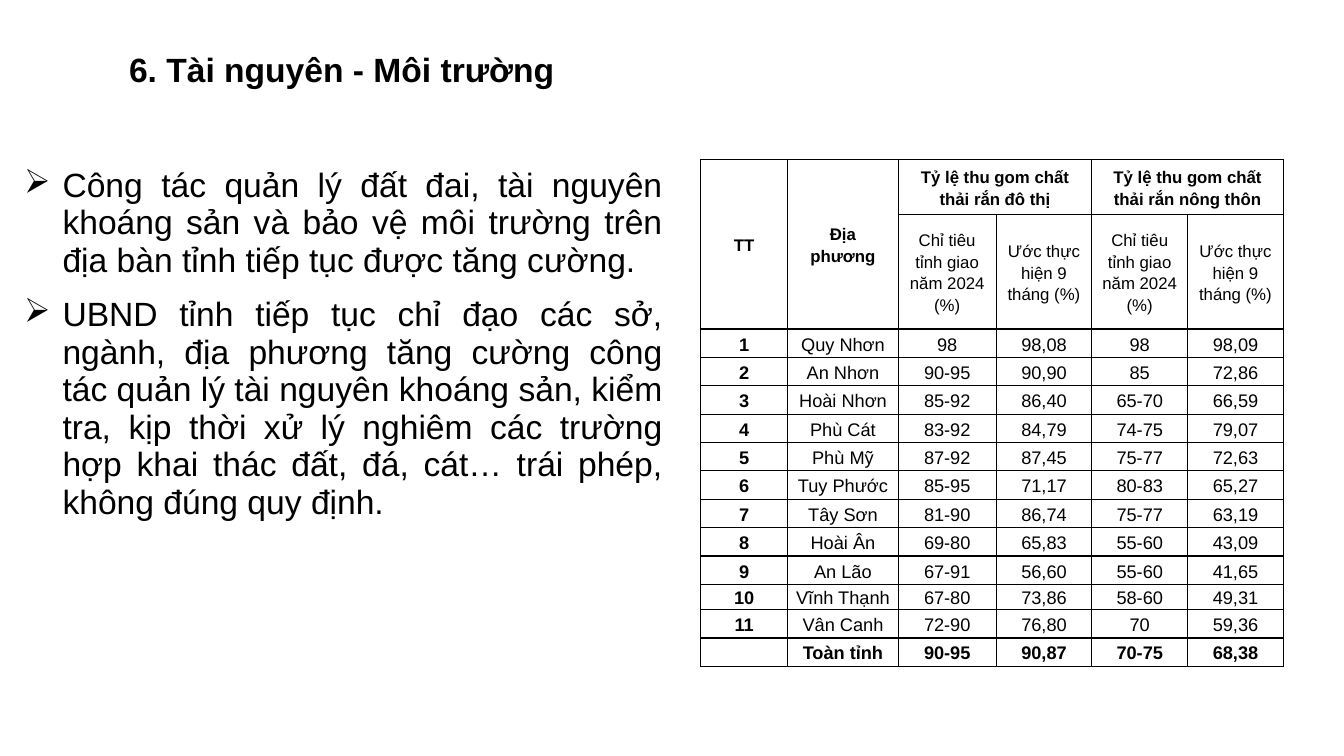
import pptx
import pptx.dml.color
import pptx.enum.text
import pptx.oxml
import pptx.oxml.ns
import pptx.util

ALIGN = pptx.enum.text.PP_ALIGN
ANCHOR = pptx.enum.text.MSO_ANCHOR
AUTO_SIZE = pptx.enum.text.MSO_AUTO_SIZE
NAMESPACE = pptx.oxml.ns.nsdecls("a")
PLAIN_TABLE = "{2D5ABB26-0587-4C30-8999-92F81FD0307C}"

TITLE = "6. Tài nguyên - Môi trường"
POINTS = [
    "Công tác quản lý đất đai, tài nguyên khoáng sản và bảo vệ môi trường "
    "trên địa bàn tỉnh tiếp tục được tăng cường.",
    "UBND tỉnh tiếp tục chỉ đạo các sở, ngành, địa phương tăng cường công tác "
    "quản lý tài nguyên khoáng sản, kiểm tra, kịp thời xử lý nghiêm các trường "
    "hợp khai thác đất, đá, cát… trái phép, không đúng quy định.",
]
TARGET = "Chỉ tiêu tỉnh giao năm 2024 (%)"
ACTUAL = "Ước thực hiện 9 tháng (%)"
HEADERS = [
    ["TT", "Địa phương", "Tỷ lệ thu gom chất thải rắn đô thị", "",
     "Tỷ lệ thu gom chất thải rắn nông thôn", ""],
    ["", "", TARGET, ACTUAL, TARGET, ACTUAL],
]
DISTRICTS = [
    ["1", "Quy Nhơn", "98", "98,08", "98", "98,09"],
    ["2", "An Nhơn", "90-95", "90,90", "85", "72,86"],
    ["3", "Hoài Nhơn", "85-92", "86,40", "65-70", "66,59"],
    ["4", "Phù Cát", "83-92", "84,79", "74-75", "79,07"],
    ["5", "Phù Mỹ", "87-92", "87,45", "75-77", "72,63"],
    ["6", "Tuy Phước", "85-95", "71,17", "80-83", "65,27"],
    ["7", "Tây Sơn", "81-90", "86,74", "75-77", "63,19"],
    ["8", "Hoài Ân", "69-80", "65,83", "55-60", "43,09"],
    ["9", "An Lão", "67-91", "56,60", "55-60", "41,65"],
    ["10", "Vĩnh Thạnh", "67-80", "73,86", "58-60", "49,31"],
    ["11", "Vân Canh", "72-90", "76,80", "70", "59,36"],
]
TOTAL = ["", "Toàn tỉnh", "90-95", "90,87", "70-75", "68,38"]
COLUMN_WEIGHTS = [0.86, 1.1, 0.97, 0.95, 0.95, 0.95]
ROW_WEIGHTS = [0.54, 1.13] + [0.28] * 9 + [0.24] + [0.28] * 2
HEADER_SPANS = [((0, 0), (1, 0)), ((0, 1), (1, 1)),
                ((0, 2), (0, 3)), ((0, 4), (0, 5))]


def color(value):
    return pptx.dml.color.RGBColor.from_string(value)


class SlideBuilder:
    font = "Arial"
    ink = "000000"
    paper = "FFFFFF"

    def __init__(self, deck):
        self.deck = deck
        self.slide = deck.slides.add_slide(deck.slide_layouts[5])

    def area(self, left, top, width, height):
        """Turn percentages of the slide's size into lengths."""
        across, down = self.deck.slide_width, self.deck.slide_height
        return [round(share * full / 100) for share, full in
                zip((left, top, width, height), (across, down, across, down))]

    def style(self, para, size, bold, align):
        para.font.name = self.font
        para.font.size = pptx.util.Pt(size)
        para.font.bold = bold
        para.font.color.rgb = color(self.ink)
        para.alignment = align

    def title(self, text, area):
        box = self.slide.shapes.title
        box.left, box.top, box.width, box.height = self.area(*area)
        frame = box.text_frame
        frame.text = text
        frame.auto_size = AUTO_SIZE.SHAPE_TO_FIT_TEXT
        frame.vertical_anchor = ANCHOR.TOP
        self.style(frame.paragraphs[0], 24, True, ALIGN.LEFT)

    def add_table(self, rows, columns, area):
        """Add a table with no banding and a style without lines or fills."""
        holder = self.slide.shapes.add_table(rows, columns, *self.area(*area))
        table = holder.table
        table.first_row = table.horz_banding = False
        table._tbl.tblPr.find(pptx.oxml.ns.qn("a:tableStyleId")).text = PLAIN_TABLE
        return holder

    def bullets(self, points, area):
        """Fill a one-cell table, whose row grows with its bulleted text."""
        holder = self.add_table(1, 1, area)
        full_height = holder.height
        holder.table.rows[0].height = pptx.util.Inches(0.41)
        holder.height = full_height
        cell = holder.table.cell(0, 0)
        cell.text = "\n".join(points)
        cell.vertical_anchor = ANCHOR.MIDDLE
        indent = pptx.util.Inches(0.38)
        for para in cell.text_frame.paragraphs:
            self.style(para, 24, False, ALIGN.JUSTIFY)
            para.space_after = pptx.util.Pt(12)
            properties = para._p.get_or_add_pPr()
            properties.set("marL", str(indent))
            properties.set("indent", str(-indent))
            bullet = pptx.oxml.parse_xml(f'<a:buChar {NAMESPACE} char="➢"/>')
            properties.find(pptx.oxml.ns.qn("a:defRPr")).addprevious(bullet)

    def table(self, rows, area, spans, is_bold):
        holder = self.add_table(len(rows), len(rows[0]), area)
        table, width, height = holder.table, holder.width, holder.height
        for column, weight in zip(table.columns, COLUMN_WEIGHTS):
            column.width = round(width * weight / sum(COLUMN_WEIGHTS))
        for row, weight in zip(table.rows, ROW_WEIGHTS):
            row.height = round(height * weight / sum(ROW_WEIGHTS))
        for r, texts in enumerate(rows):
            size = 12 if r < len(HEADERS) else 13
            for c, text in enumerate(texts):
                self.cell(table.cell(r, c), text, size, is_bold(r, c))
        for start, end in spans:
            table.cell(*start).merge(table.cell(*end))

    def cell(self, cell, text, size, bold):
        cell.text = text
        cell.vertical_anchor = ANCHOR.MIDDLE
        cell.margin_left = cell.margin_right = pptx.util.Pt(5.4)
        cell.margin_top = cell.margin_bottom = 0
        para = cell.text_frame.paragraphs[0]
        self.style(para, size, bold, ALIGN.CENTER)
        para.line_spacing = 1.15
        para.space_after = pptx.util.Pt(10)
        for side in "LRTB":
            cell._tc.get_or_add_tcPr().append(pptx.oxml.parse_xml(
                f'<a:ln{side} {NAMESPACE} w="{pptx.util.Pt(1)}"><a:solidFill>'
                f'<a:srgbClr val="{self.ink}"/></a:solidFill></a:ln{side}>'))
        cell.fill.solid()
        cell.fill.fore_color.rgb = color(self.paper)


def main():
    deck = pptx.Presentation()
    deck.slide_width = pptx.util.Inches(13.33)
    deck.slide_height = pptx.util.Inches(7.5)
    rows = HEADERS + DISTRICTS + [TOTAL]
    last = len(rows) - 1

    builder = SlideBuilder(deck)
    builder.title(TITLE, (8.85, 5.8, 35.56, 6.67))
    builder.bullets(POINTS, (1.05, 19.73, 48.99, 59.07))
    builder.table(rows, (52.14, 21.13, 43.36, 66.93), HEADER_SPANS,
                  lambda r, c: r in (0, last) or c == 0)
    deck.save("out.pptx")


if __name__ == "__main__":
    main()
